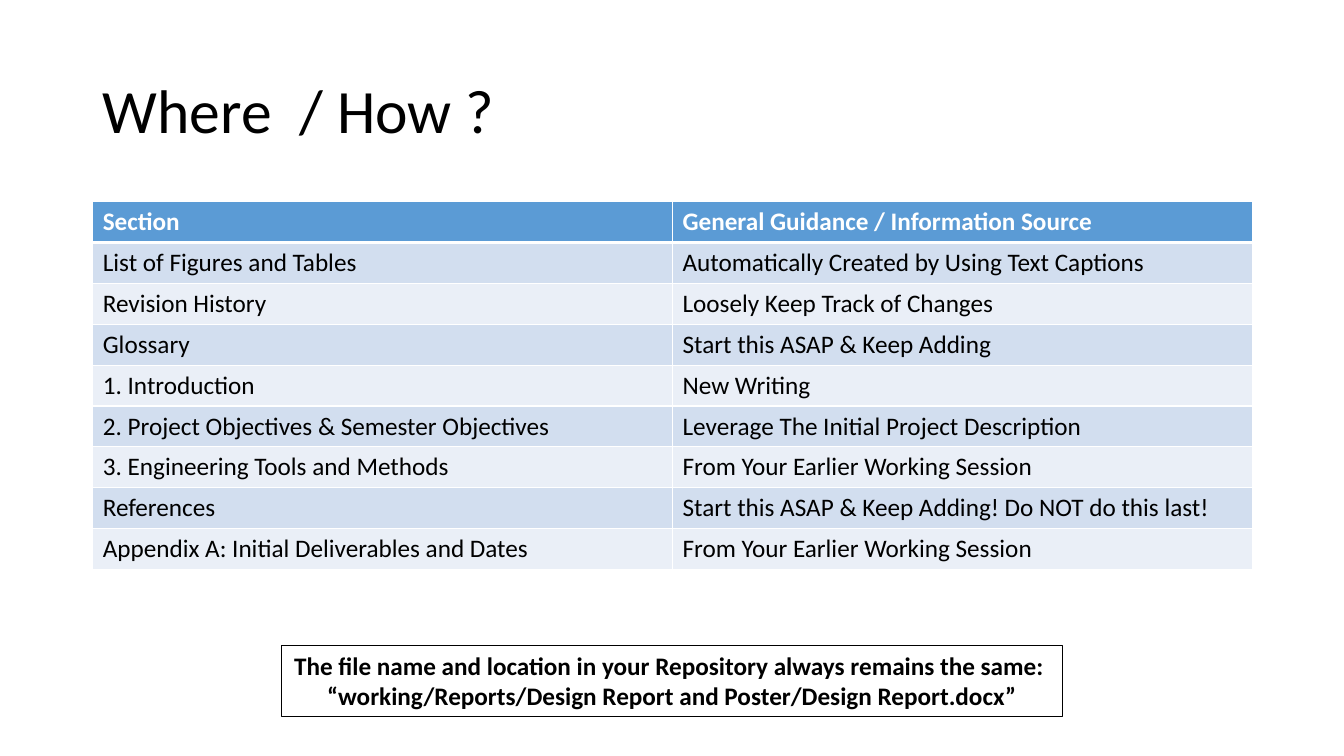
"""Build a slide with a section guidance table and a file location note."""
import pptx
import pptx.util
import pptx.dml.color
import pptx.enum.shapes
import pptx.enum.text
import pptx.oxml.ns
from lxml import etree

Inches = pptx.util.Inches
Pt = pptx.util.Pt
ALIGN = pptx.enum.text.PP_ALIGN
ANCHOR = pptx.enum.text.MSO_ANCHOR

ROWS = [
    ("Section", "General Guidance / Information Source"),
    ("List of Figures and Tables", "Automatically Created by Using Text Captions"),
    ("Revision History", "Loosely Keep Track of Changes"),
    ("Glossary", "Start this ASAP & Keep Adding"),
    ("1. Introduction", "New Writing"),
    ("2. Project Objectives & Semester Objectives",
     "Leverage The Initial Project Description"),
    ("3. Engineering Tools and Methods", "From Your Earlier Working Session"),
    ("References", "Start this ASAP & Keep Adding! Do NOT do this last!"),
    ("Appendix A: Initial Deliverables and Dates",
     "From Your Earlier Working Session"),
]
NOTE = [
    "The file name and location in your Repository always remains the same: ",
    "“working/Reports/Design Report and Poster/Design Report.docx”",
]


def color(code):
    return pptx.dml.color.RGBColor.from_string(code)


def write(frame, lines, size=18, ink="000000", bold=False, align=ALIGN.LEFT,
          space=None, font="Calibri"):
    frame.word_wrap = True
    for i, line in enumerate(lines):
        para = frame.paragraphs[0] if i == 0 else frame.add_paragraph()
        para.alignment = align
        para.line_spacing = space
        run = para.add_run()
        run.text = line
        run.font.name = font
        run.font.size = Pt(size)
        run.font.bold = bold
        run.font.color.rgb = color(ink)


def edge(cell, side, width, ink="FFFFFF"):
    name = pptx.oxml.ns.qn
    line = etree.SubElement(cell._tc.get_or_add_tcPr(), name("a:ln" + side),
                            w=str(Pt(width)))
    fill = etree.SubElement(line, name("a:solidFill"))
    etree.SubElement(fill, name("a:srgbClr"), val=ink)


class Deck:
    head = "5B9BD5"
    bands = ("EAEFF7", "D2DEEF")

    def __init__(self):
        self.file = pptx.Presentation()
        self.file.slide_width = Inches(13.33)
        self.file.slide_height = Inches(7.5)
        self.slide = self.file.slides.add_slide(self.file.slide_layouts[6])

    def title(self, text, left, top, width, height):
        box = self.slide.shapes.add_textbox(
            Inches(left), Inches(top), Inches(width), Inches(height))
        box.text_frame.vertical_anchor = ANCHOR.MIDDLE
        write(box.text_frame, [text], size=44, space=0.9)

    def table(self, rows, left, top, width, height):
        grid = self.slide.shapes.add_table(
            len(rows), len(rows[0]), Inches(left), Inches(top),
            Inches(width), Inches(height)).table
        for r, row in enumerate(rows):
            for c, text in enumerate(row):
                cell = grid.cell(r, c)
                for side in "LRTB":
                    thick = (r, side) in ((0, "B"), (1, "T"))
                    edge(cell, side, 3 if thick else 1)
                cell.fill.solid()
                cell.fill.fore_color.rgb = color(
                    self.bands[r % 2] if r else self.head)
                write(cell.text_frame, [text], bold=r == 0,
                      ink="000000" if r else "FFFFFF")

    def note(self, lines, left, top, width, height):
        box = self.slide.shapes.add_shape(
            pptx.enum.shapes.MSO_SHAPE.RECTANGLE, Inches(left), Inches(top),
            Inches(width), Inches(height))
        box.shadow.inherit = False
        box.fill.background()
        box.line.color.rgb = color("000000")
        box.line.width = Pt(0.75)
        box.text_frame.vertical_anchor = ANCHOR.TOP
        box.text_frame.auto_size = pptx.enum.text.MSO_AUTO_SIZE.SHAPE_TO_FIT_TEXT
        write(box.text_frame, lines, bold=True, align=ALIGN.CENTER)


def main():
    deck = Deck()
    deck.title("Where  / How ?", 0.92, 0.4, 11.5, 1.45)
    deck.table(ROWS, 0.92, 2, 11.5, 3.65)
    deck.note(NOTE, 2.79, 6.4, 7.75, 0.71)
    deck.file.save("out.pptx")


if __name__ == "__main__":
    main()
